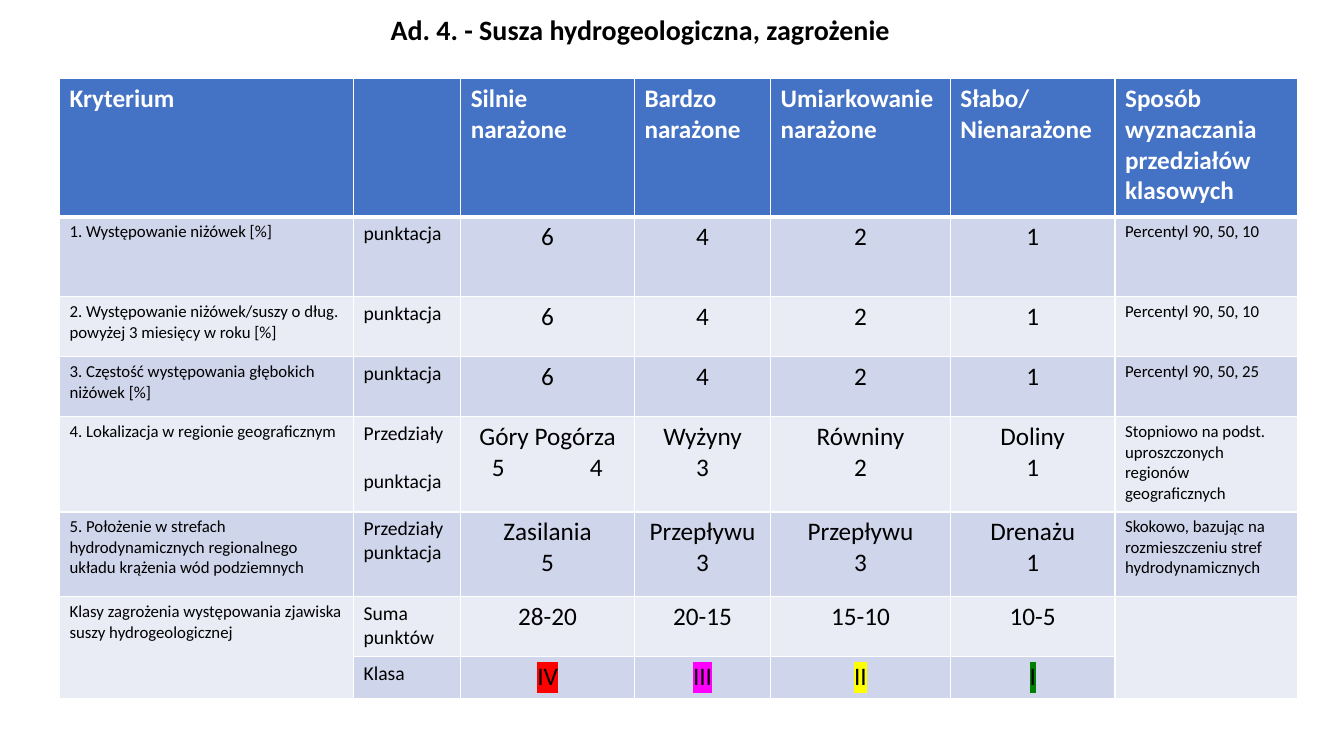
from dataclasses import dataclass

from lxml import etree
from pptx import Presentation
from pptx import util as u
from pptx.dml import color as colors
from pptx.enum import text
from pptx.oxml import ns


@dataclass(frozen=True)
class Theme:
    font: str = "Calibri"
    white: str = "FFFFFF"
    black: str = "000000"
    header: str = "4472C4"
    bands: tuple = ("CFD5EA", "E9EBF5")
    classes: tuple = ("FF0000", "FF00FF", "FFFF00", "008000")
    title: int = 20
    large: int = 18
    medium: int = 14
    small: int = 12
    thin: int = 1
    thick: int = 3


theme = Theme()


def write(para, words, size, color=theme.black, bold=False, align="LEFT", highlight=None):
    para.alignment = getattr(text.PP_ALIGN, align)
    span = para.add_run()
    span.text = words
    span.font.size = u.Pt(size)
    span.font.bold = bold
    span.font.color.rgb = colors.RGBColor.from_string(color)
    if highlight:
        marker = etree.SubElement(span.font.fill._xPr, ns.qn("a:highlight"))
        etree.SubElement(marker, ns.qn("a:srgbClr"), val=highlight)
    span.font.name = theme.font


def border(cell, row):
    props = cell._tc.get_or_add_tcPr()
    thick_side = {0: "lnB", 1: "lnT"}.get(row)
    for place, side in enumerate(("lnL", "lnR", "lnT", "lnB")):
        width = theme.thick if side == thick_side else theme.thin
        line = etree.Element(ns.qn(f"a:{side}"), w=str(u.Pt(width)))
        fill = etree.SubElement(line, ns.qn("a:solidFill"))
        etree.SubElement(fill, ns.qn("a:srgbClr"), val=theme.white)
        props.insert(place, line)


deck = Presentation()
deck.slide_width = u.Cm(33.87)
deck.slide_height = u.Cm(19.05)
page = deck.slides.add_slide(deck.slide_layouts[6])

title_box = page.shapes.add_textbox(u.Cm(0.91), u.Cm(0.36), u.Cm(30.61), u.Cm(0.89))
title_box.text_frame.word_wrap = True
title_box.text_frame.vertical_anchor = text.MSO_ANCHOR.MIDDLE
title_para = title_box.text_frame.paragraphs[0]
title_para.line_spacing = 0.9
write(title_para, "Ad. 4. - Susza hydrogeologiczna, zagrożenie ", theme.title, bold=True, align="CENTER")

criteria = [
    ["Kryterium", "", "Silnie narażone", "Bardzo narażone", "Umiarkowanie narażone",
     "Słabo/ Nienarażone", "Sposób wyznaczania przedziałów klasowych"],
    ["1. Występowanie niżówek [%]", "punktacja", "6", "4", "2", "1", "Percentyl 90, 50, 10"],
    ["2. Występowanie niżówek/suszy o dług. powyżej 3 miesięcy w roku [%]",
     "punktacja", "6", "4", "2", "1", "Percentyl 90, 50, 10"],
    ["3. Częstość występowania głębokich niżówek [%]",
     "punktacja", "6", "4", "2", "1", "Percentyl 90, 50, 25"],
    ["4. Lokalizacja w regionie geograficznym", "Przedziały\npunktacja",
     "Góry Pogórza\n\t5\t4", "Wyżyny\n3", "Równiny\n2", "Doliny\n1",
     "Stopniowo na podst. uproszczonych regionów geograficznych"],
    ["5. Położenie w strefach hydrodynamicznych regionalnego układu krążenia wód podziemnych",
     "Przedziały\npunktacja", "Zasilania\n5", "Przepływu\n3", "Przepływu\n3", "Drenażu\n1",
     "Skokowo, bazując na rozmieszczeniu stref hydrodynamicznych"],
    ["Klasy zagrożenia występowania zjawiska suszy hydrogeologicznej",
     "Suma punktów", "28-20", "20-15", "15-10", "10-5", ""],
    ["", "Klasa", "IV", "III", "II", "I", ""],
]
widths = [7.41, 2.7, 4.38, 3.43, 4.53, 4.15, 4.6]
heights = [3.48, 2.02, 1.51, 1.51, 2.4, 2.14, 1.51, 1.06]
column_sizes = [theme.small, theme.medium] + [theme.large] * 4 + [theme.small]
last_row = len(heights) - 1
last_column = len(widths) - 1

table = page.shapes.add_table(
    len(heights), len(widths), u.Cm(1.5), u.Cm(1.98), u.Cm(sum(widths)), u.Cm(sum(heights))
).table
for column, width in zip(table.columns, widths):
    column.width = u.Cm(width)
for table_row, height in zip(table.rows, heights):
    table_row.height = u.Cm(height)
for edge in (0, last_column):
    table.cell(last_row - 1, edge).merge(table.cell(last_row, edge))

for row, entries in enumerate(criteria):
    for column, entry in enumerate(entries):
        cell = table.cell(row, column)
        cell.fill.solid()
        band = theme.bands[(row - 1) % 2] if row else theme.header
        cell.fill.fore_color.rgb = colors.RGBColor.from_string(band)
        border(cell, row)
        if not entry:
            continue
        rated = 2 <= column < last_column
        for number, words in enumerate(entry.split("\n")):
            para = cell.text_frame.add_paragraph() if number else cell.text_frame.paragraphs[0]
            if row == 0:
                write(para, words, theme.large, color=theme.white, bold=True)
            else:
                centred = rated and "\t" not in words
                highlight = theme.classes[column - 2] if rated and row == last_row else None
                write(para, words, column_sizes[column],
                      align="CENTER" if centred else "LEFT", highlight=highlight)

region_cells = table.cell(4, 1), table.cell(4, 2)
region_cells[0].text_frame.paragraphs[1].space_before = u.Pt(17)
score_props = region_cells[1].text_frame.paragraphs[1]._p.get_or_add_pPr()
tab_stops = etree.SubElement(score_props, ns.qn("a:tabLst"))
for position in (0.69, 3.16):
    etree.SubElement(tab_stops, ns.qn("a:tab"), pos=str(u.Cm(position)), algn="ctr")

deck.save("out.pptx")
